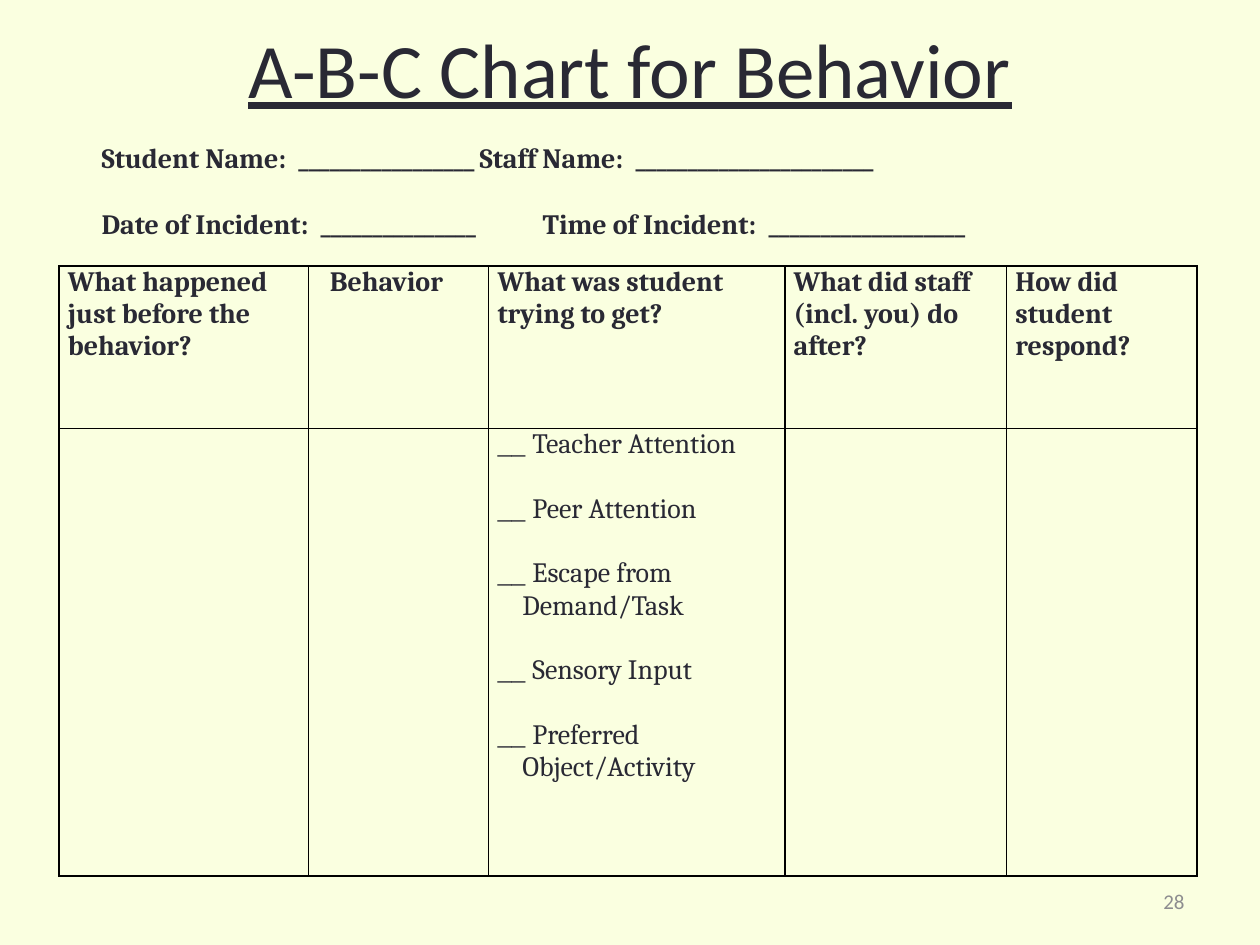
from lxml import etree
from pptx import Presentation
from pptx import util as u
from pptx.dml.color import RGBColor
from pptx.enum import text
from pptx.oxml.ns import qn

INK, GREY, CREAM, BLACK = "292934", "8D8D8F", "FAFFE0", "000000"
LINE_GAP = 18.5  # points, one blank line of 16 pt text

COLUMN_WIDTHS = [5.03, 3.63, 5.97, 4.47, 3.84]
ROW_HEIGHTS = [3.28, 9.02]
HEADERS = ["What happened just before the behavior?", "Behavior",
           "What was student trying to get?",
           "What did staff (incl. you) do after?", "How did student respond?"]
GOALS = [["Teacher Attention"], ["Peer Attention"],
         ["Escape from", "Demand/Task"], ["Sensory Input"],
         ["Preferred", "Object/Activity"]]
FORM_LINES = [
    "Student Name:  _________________\tStaff Name:  _______________________",
    "Date of Incident:  _______________\t\tTime of Incident:  ___________________",
]


def color(hex_string):
    return RGBColor.from_string(hex_string)


def add_run(p, words, size=16, font="Cambria", ink=INK, bold=False):
    r = p.add_run()
    r.text = words
    r.font.size, r.font.name, r.font.bold = u.Pt(size), font, bold
    r.font.color.rgb = color(ink)
    return r


def next_paragraph(tf, is_first):
    return tf.paragraphs[0] if is_first else tf.add_paragraph()


def set_indent(p, left, first=0):
    pPr = p._p.get_or_add_pPr()
    pPr.set("marL", str(u.Cm(left)))
    pPr.set("indent", str(u.Cm(first)))
    return pPr


def add_text_box(s, box):
    tf = s.shapes.add_textbox(*map(u.Cm, box)).text_frame
    tf.word_wrap = True
    tf.vertical_anchor = text.MSO_ANCHOR.MIDDLE
    return tf


def set_borders(cell, hex_string, points):
    tcPr = cell._tc.get_or_add_tcPr()
    for position, side in enumerate(("lnL", "lnR", "lnT", "lnB")):
        ln = etree.Element(qn("a:" + side), w=str(u.Pt(points)))
        fill = etree.SubElement(ln, qn("a:solidFill"))
        etree.SubElement(fill, qn("a:srgbClr"), val=hex_string)
        tcPr.insert(position, ln)


def place_title(s, box):
    sp = s.shapes.title
    sp.left, sp.top, sp.width, sp.height = map(u.Cm, box)
    tf = sp.text_frame
    tf.auto_size = text.MSO_AUTO_SIZE.NONE
    tf.vertical_anchor = text.MSO_ANCHOR.MIDDLE
    p = tf.paragraphs[0]
    p.alignment = text.PP_ALIGN.CENTER
    add_run(p, "A-B-C Chart for Behavior", 44, "Calibri").font.underline = True


def place_form_lines(s, box):
    tf = add_text_box(s, box)
    for i, line in enumerate(FORM_LINES):
        p = next_paragraph(tf, i == 0)
        p.space_before = u.Pt(LINE_GAP if i else 0)
        tabs = etree.SubElement(set_indent(p, 0, 1.27), qn("a:tabLst"))
        for stop in (8.89, 10.16):
            etree.SubElement(tabs, qn("a:tab"), pos=str(u.Cm(stop)), algn="l")
        add_run(p, line, bold=True)


def fill_goals(cell):
    tf = cell.text_frame
    for i, (goal, *more) in enumerate(GOALS):
        p = next_paragraph(tf, i == 0)
        p.space_before = u.Pt(LINE_GAP if i else 0)
        add_run(p, "__ ", font="Times New Roman")
        add_run(p, goal)
        for line in more:
            p = tf.add_paragraph()
            set_indent(p, 0.5)
            add_run(p, line)


def place_table(s, box):
    table = s.shapes.add_table(len(ROW_HEIGHTS), len(COLUMN_WIDTHS),
                               *map(u.Cm, box)).table
    table.first_row = table.horz_banding = False
    for column, width in zip(table.columns, COLUMN_WIDTHS):
        column.width = u.Cm(width)
    for row, height in zip(table.rows, ROW_HEIGHTS):
        row.height = u.Cm(height)
    for cell in table.iter_cells():
        cell.fill.background()
        cell.margin_left = cell.margin_right = u.Cm(0.18)
        cell.margin_top = cell.margin_bottom = 0
        set_borders(cell, BLACK, 1)
    for i, header in enumerate(HEADERS):
        p = table.cell(0, i).text_frame.paragraphs[0]
        if header == "Behavior":
            set_indent(p, 0.25)
        add_run(p, header, bold=True)
    fill_goals(table.cell(1, 2))


def place_page_number(s, box):
    p = add_text_box(s, box).paragraphs[0]
    p.alignment = text.PP_ALIGN.RIGHT
    add_run(p, "28", 12, "Calibri", GREY)


def main():
    prs = Presentation()
    prs.slide_width, prs.slide_height = u.Cm(25.4), u.Cm(19.05)
    s = prs.slides.add_slide(prs.slide_layouts[5])  # title only
    s.background.fill.solid()
    s.background.fill.fore_color.rgb = color(CREAM)

    # Boxes: left, top, width, height
    place_title(s, (1.27, 0.76, 22.86, 1.19))
    place_page_number(s, (18.21, 17.65, 5.92, 1.02))
    place_table(s, (1.19, 5.36, sum(COLUMN_WIDTHS), sum(ROW_HEIGHTS)))
    place_form_lines(s, (0.53, 2.69, 23.09, 2.31))
    prs.save("out.pptx")


if __name__ == "__main__":
    main()
